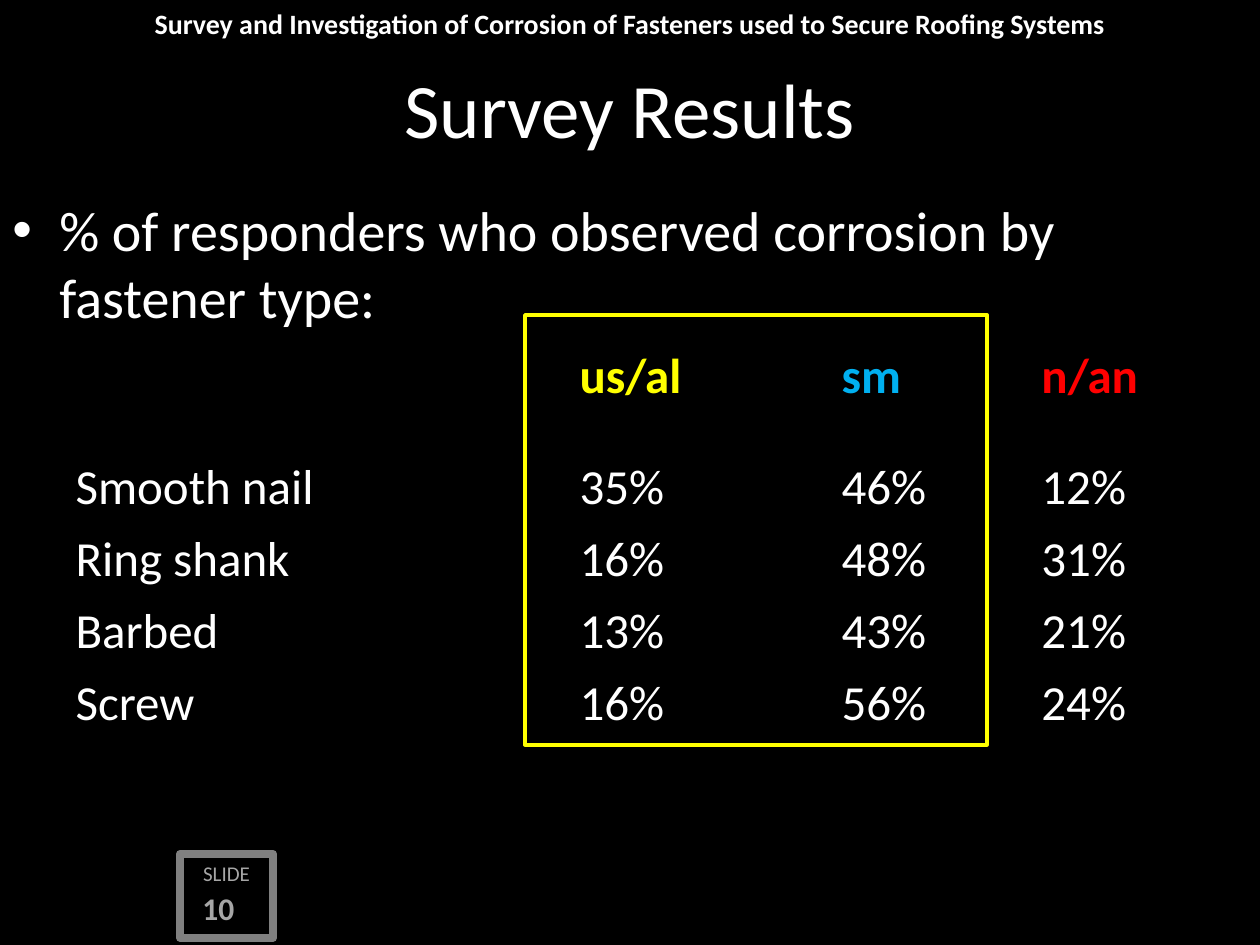
"""Builds the survey results slide on corrosion by fastener type."""
from lxml import etree
from pptx import Presentation, util as u
from pptx.dml.color import RGBColor
from pptx.enum import shapes, text
from pptx.oxml.ns import qn

PX = 914400 // 126
THEME = {
    "font": "Calibri", "black": "000000", "white": "FFFFFF", "frame": "808080",
    "muted": "A6A6A6", "yellow": "FFFF00", "blue": "00B0F0", "red": "FF0000",
    "title": 44, "body": 32, "table": 28, "space": 20, "number": 18, "banner": 16, "label": 12,
}


def style(run, size, color, bold=False):
    run.font.name = THEME["font"]
    run.font.size = u.Pt(THEME[size])
    run.font.color.rgb = RGBColor.from_string(THEME[color])
    run.font.bold = bold


def add_text(box, wording, size, color, bold=False, align=text.PP_ALIGN.CENTER, anchor=text.MSO_ANCHOR.TOP):
    frame = box.text_frame
    frame.word_wrap = True
    frame.vertical_anchor = anchor
    frame.text = wording
    paragraph = frame.paragraphs[0]
    paragraph.alignment = align
    style(paragraph.runs[0], size, color, bold)
    return paragraph


deck = Presentation()
deck.slide_width, deck.slide_height = 1260 * PX, 945 * PX
slide = deck.slides.add_slide(deck.slide_layouts[6])
slide.background.fill.solid()
slide.background.fill.fore_color.rgb = RGBColor.from_string(THEME["black"])
canvas = slide.shapes

slide_badge = canvas.add_shape(shapes.MSO_SHAPE.RECTANGLE, 180 * PX, 854 * PX, 93 * PX, 84 * PX)
slide_badge.shadow.inherit = False
slide_badge.fill.solid()
slide_badge.fill.fore_color.rgb = RGBColor.from_string(THEME["black"])
slide_badge.line.color.rgb = RGBColor.from_string(THEME["frame"])
slide_badge.line.width = u.Pt(4.5)
add_text(slide_badge, "SLIDE", "label", "muted")

slide_number = canvas.add_textbox(179 * PX, 879 * PX, 87 * PX, 54 * PX)
number_line = add_text(slide_number, "10", "number", "muted", bold=True)
number_gap = number_line.add_run()
number_gap.text = " "
style(number_gap, "space", "muted", bold=True)

banner = canvas.add_textbox(0, 0, 1260 * PX, 38 * PX)
add_text(banner, "Survey and Investigation of Corrosion of Fasteners used to Secure Roofing Systems",
         "banner", "white", bold=True)

title = canvas.add_textbox(0, 42 * PX, 1260 * PX, 132 * PX)
add_text(title, "Survey Results", "title", "white", anchor=text.MSO_ANCHOR.MIDDLE)

question = canvas.add_textbox(0, 189 * PX, 1260 * PX, 640 * PX)
question_line = add_text(question, "% of responders who observed corrosion by fastener type:",
                         "body", "white", align=text.PP_ALIGN.LEFT)
indent = question_line._p.get_or_add_pPr()
indent.set("marL", str(47 * PX))
indent.set("indent", str(-47 * PX))
etree.SubElement(indent, qn("a:buFont"), typeface="Arial")
etree.SubElement(indent, qn("a:buChar"), char="•")

results = [
    ("", "us/al", "sm", "n/an"),
    ("Smooth nail", "35%", "46%", "12%"),
    ("Ring shank", "16%", "48%", "31%"),
    ("Barbed", "13%", "43%", "21%"),
    ("Screw", "16%", "56%", "24%"),
]
header_colors = ["white", "yellow", "blue", "red"]
column_widths = [504, 262, 200, 189]
row_heights = [111] + [72] * 4
results_table = canvas.add_table(len(results), len(column_widths), 63 * PX, 341 * PX,
                                 sum(column_widths) * PX, sum(row_heights) * PX).table
for column, width in zip(results_table.columns, column_widths):
    column.width = width * PX
for row_index, (row, height, values) in enumerate(zip(results_table.rows, row_heights, results)):
    row.height = height * PX
    for cell, value, header_color in zip(row.cells, values, header_colors):
        cell.fill.solid()
        cell.fill.fore_color.rgb = RGBColor.from_string(THEME["black"])
        for side in ("a:lnL", "a:lnR", "a:lnT", "a:lnB"):
            border = etree.Element(qn(side), w="0")
            etree.SubElement(border, qn("a:noFill"))
            cell._tc.tcPr.insert_element_before(border, "a:solidFill")
        if value:
            cell.text_frame.text = value
            is_header = row_index == 0
            style(cell.text_frame.paragraphs[0].runs[0], "table",
                  header_color if is_header else "white", is_header)

highlight = canvas.add_shape(shapes.MSO_SHAPE.RECTANGLE, 525 * PX, 315 * PX, 462 * PX, 430 * PX)
highlight.shadow.inherit = False
highlight.fill.background()
highlight.line.color.rgb = RGBColor.from_string(THEME["yellow"])
highlight.line.width = u.Pt(2)

deck.save("out.pptx")
